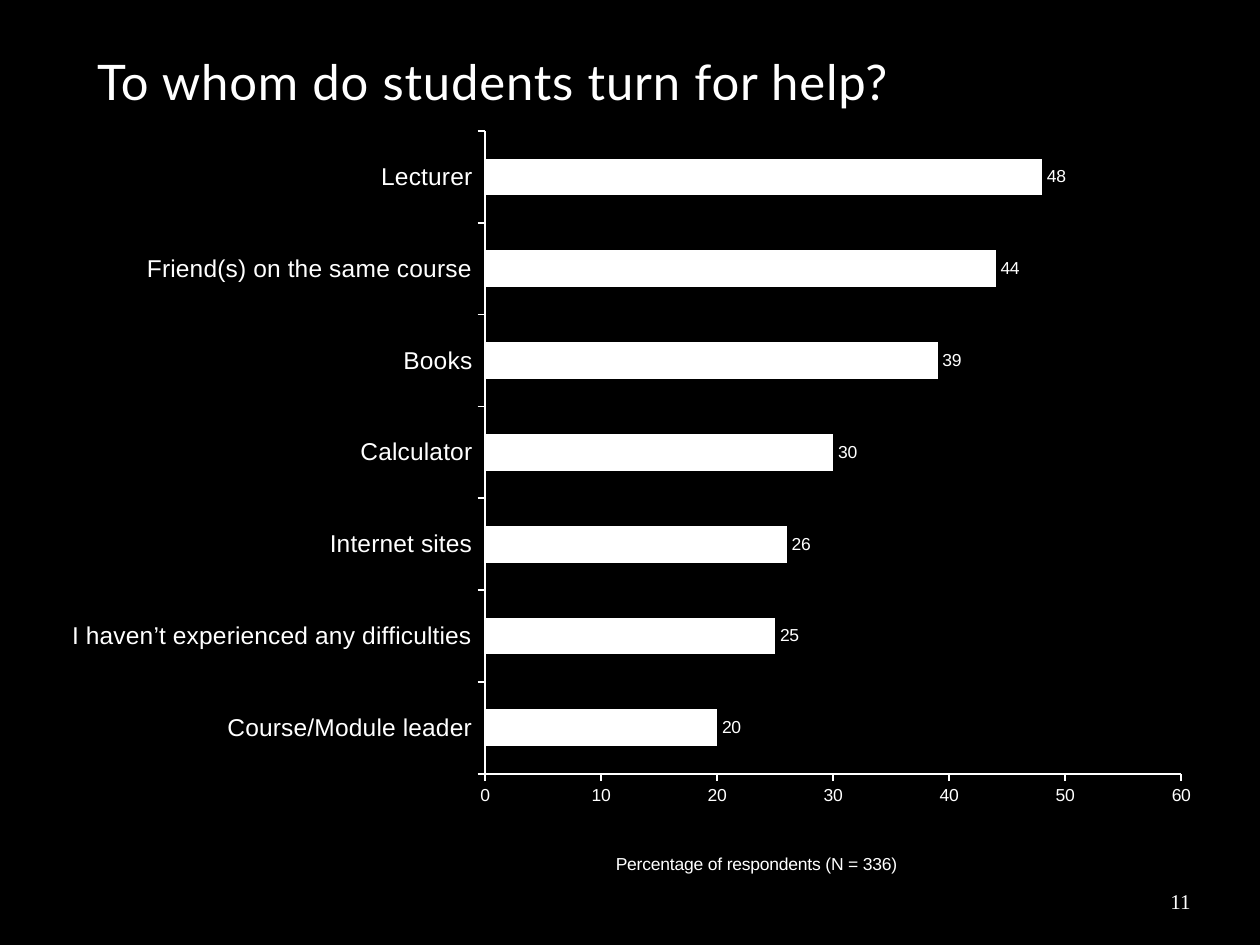
"""Build a slide with a bar chart of where students turn for help."""
from lxml import etree
from pptx import Presentation
from pptx.chart.data import CategoryChartData
from pptx.dml.color import RGBColor
from pptx.enum.chart import XL_CHART_TYPE, XL_LABEL_POSITION, XL_TICK_MARK
from pptx.enum.text import MSO_ANCHOR, PP_ALIGN
from pptx.oxml.ns import qn
from pptx.util import Inches, Pt

BAR = XL_CHART_TYPE.BAR_CLUSTERED
OUTSIDE_END = XL_LABEL_POSITION.OUTSIDE_END
TICK_OUT, TICK_NONE = XL_TICK_MARK.OUTSIDE, XL_TICK_MARK.NONE
MIDDLE = MSO_ANCHOR.MIDDLE
LEFT, RIGHT = PP_ALIGN.LEFT, PP_ALIGN.RIGHT

ANSWERS = {
    "Course/Module leader": 20,
    "I haven’t experienced any difficulties": 25,
    "Internet sites": 26,
    "Calculator": 30,
    "Books": 39,
    "Friend(s) on the same course": 44,
    "Lecturer": 48,
}


def color(value):
    return RGBColor.from_string(value)


def set_layout(parent, **settings):
    layout = parent.find(qn("c:layout"))
    if layout is None:
        layout = etree.Element(qn("c:layout"))
        parent.insert(0 if parent.find(qn("c:tx")) is None else 1, layout)
    manual = etree.SubElement(layout, qn("c:manualLayout"))
    for name, value in settings.items():
        etree.SubElement(manual, qn(f"c:{name}")).set("val", str(value))


class SlideBuilder:
    ink = "FFFFFF"
    ground = "000000"

    def __init__(self, deck):
        self.page = deck.slides.add_slide(deck.slide_layouts[5])
        fill = self.page.background.fill
        fill.solid()
        fill.fore_color.rgb = color(self.ground)

    def style(self, font, name, size):
        font.name = name
        font.size = Pt(size)
        font.bold = False
        font.color.rgb = color(self.ink)

    def add_text(self, box, text, name, size, align):
        frame = box.text_frame
        frame.word_wrap = True
        frame.vertical_anchor = MIDDLE
        para = frame.paragraphs[0]
        para.alignment = align
        span = para.add_run()
        span.text = text
        self.style(span.font, name, size)
        return span

    def title(self, text, left, top, width, height):
        box = self.page.shapes.title
        box.left, box.top = Inches(left), Inches(top)
        box.width, box.height = Inches(width), Inches(height)
        span = self.add_text(box, text, "Lato", 28, LEFT)
        span.font._element.set("spc", "50")

    def page_number(self, text, left, top, width, height):
        box = self.page.shapes.add_textbox(
            Inches(left), Inches(top), Inches(width), Inches(height))
        frame = box.text_frame
        frame.margin_left = frame.margin_right = Inches(0.05)
        frame.margin_top = frame.margin_bottom = Inches(0.05)
        self.add_text(box, text, "Times New Roman", 12, RIGHT)

    def axis(self, axis, size):
        axis.has_major_gridlines = False
        axis.major_tick_mark = TICK_OUT
        axis.minor_tick_mark = TICK_NONE
        axis.format.line.color.rgb = color(self.ink)
        axis.format.line.width = Pt(1)
        self.style(axis.tick_labels.font, "Arial", size)

    def bar_chart(self, answers, caption, left, top, width, height):
        data = CategoryChartData(number_format="0")
        data.categories = list(answers)
        data.add_series("Series 1", list(answers.values()))
        chart = self.page.shapes.add_chart(
            BAR, Inches(left), Inches(top), Inches(width), Inches(height), data).chart
        chart.has_legend = False
        chart.has_title = False
        self.style(chart.font, "Arial", 10)

        plot = chart.plots[0]
        plot.gap_width = 150
        plot.vary_by_categories = False
        fill = plot.series[0].format.fill
        fill.solid()
        fill.fore_color.rgb = color(self.ink)
        plot.has_data_labels = True
        labels = plot.data_labels
        labels.show_value = True
        labels.number_format = "0"
        labels.number_format_is_linked = False
        labels.position = OUTSIDE_END
        self.style(labels.font, "Arial", 10)

        self.axis(chart.category_axis, 14)
        values = chart.value_axis
        self.axis(values, 10)
        values.minimum_scale, values.maximum_scale, values.major_unit = 0, 60, 10
        values.tick_labels.number_format = "0"
        values.tick_labels.number_format_is_linked = False

        heading = values.axis_title
        span = heading.text_frame.paragraphs[0].add_run()
        span.text = caption
        self.style(span.font, "Arial", 10)
        set_layout(heading._element, xMode="edge", yMode="edge", x=0.49, y=0.97)
        plot_area = chart._chartSpace.chart.plotArea
        set_layout(plot_area, layoutTarget="inner", xMode="edge", yMode="edge",
                   x=0.38, y=0.02, w=0.6, h=0.85)


def main():
    deck = Presentation()
    deck.slide_width, deck.slide_height = Inches(10), Inches(7.5)
    slide = SlideBuilder(deck)
    slide.title("To whom do students turn for help?", 0.67, 0.21, 8.74, 0.87)
    slide.page_number("11", 7.17, 6.95, 2.33, 0.4)
    slide.bar_chart(ANSWERS, "Percentage of respondents (N = 336)", 0.35, 0.92, 9.21, 6.06)
    deck.save("out.pptx")


if __name__ == "__main__":
    main()
